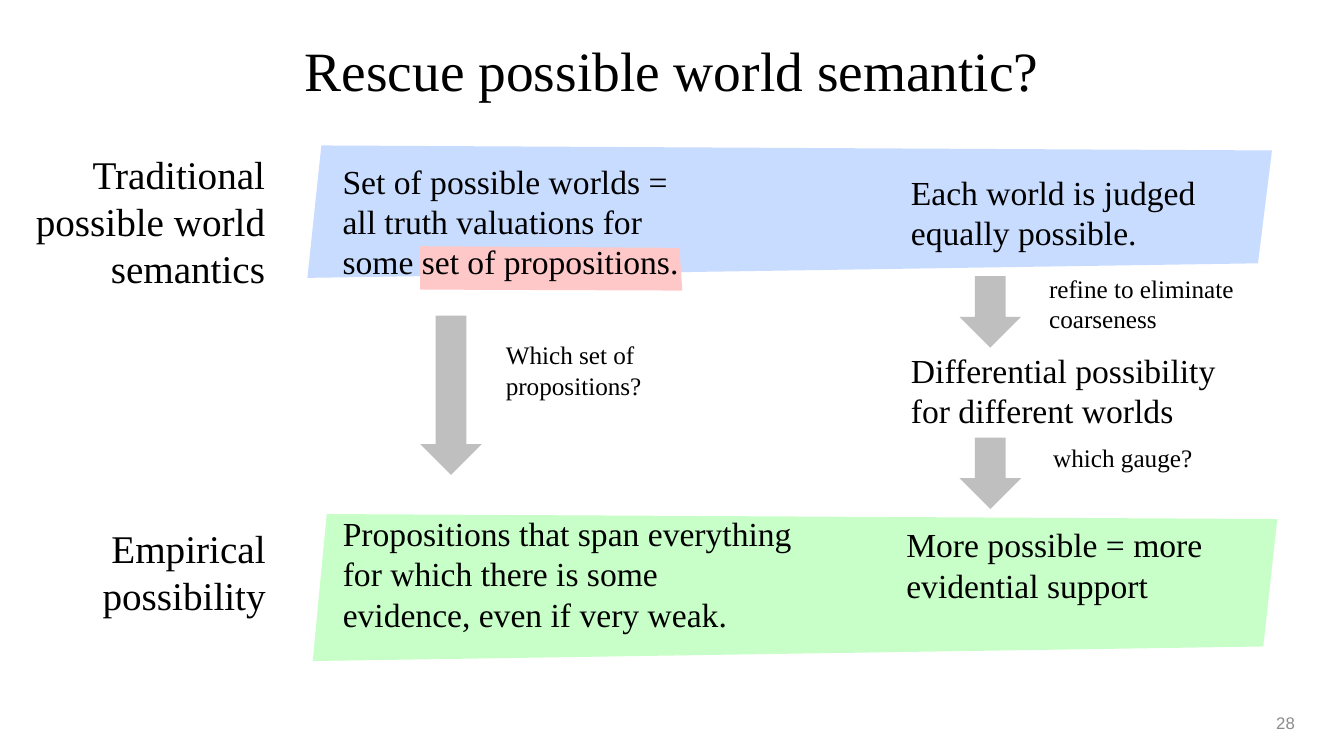
from pptx import Presentation
from pptx.dml.color import RGBColor
from pptx.enum.shapes import MSO_SHAPE
from pptx.enum.text import MSO_ANCHOR, PP_ALIGN
from pptx.util import Pt

SERIF = "Times New Roman"
BLACK, GREY, ARROW_GREY = "000000", "8C8C8C", "BFBFBF"
BLUE, GREEN, PINK = "C8DCFF", "C8FFC8", "FFC8C8"
LABEL_SIZE, BODY_SIZE, NOTE_SIZE = 28, 24, 18
ARROW_WIDTH = 44


def color(hex_string):
    return RGBColor.from_string(hex_string)


def paint(shape, fill):
    shape.shadow.inherit = False
    shape.fill.solid()
    shape.fill.fore_color.rgb = color(fill)
    shape.line.fill.background()


def add_text(slide, box, text, size, align=PP_ALIGN.LEFT, anchor=MSO_ANCHOR.TOP,
             font=SERIF, ink=BLACK, wrap=True):
    text_box = slide.shapes.add_textbox(*map(Pt, box))
    frame = text_box.text_frame
    frame.word_wrap = wrap
    frame.vertical_anchor = anchor
    frame.text = text
    paragraph = frame.paragraphs[0]
    paragraph.alignment = align
    run_font = paragraph.runs[0].font
    run_font.name, run_font.size = font, Pt(size)
    run_font.color.rgb = color(ink)
    return paragraph


def add_polygon(slide, points, fill):
    corners = [(Pt(x), Pt(y)) for x, y in points]
    builder = slide.shapes.build_freeform(*corners[0])
    builder.add_line_segments(corners[1:], close=True)
    paint(builder.convert_to_shape(), fill)


def add_band(slide, box, fill):
    """Slanted band whose right end is a little narrower than its left end."""
    left, top, width, height = box
    right, bottom, slant = left + width, top + height, 10
    add_polygon(slide, [(left + slant, top), (right, top + 3.6),
                        (right - slant, bottom - 10.4), (left, bottom)], fill)


def add_highlight(slide, box):
    left, top, width, height = box
    right, bottom = left + width, top + height
    add_polygon(slide, [(left, top), (right - 2, top + 1.2),
                        (right, bottom), (left, bottom - 0.7)], PINK)


def add_step(slide, box, question, note_left, note_top, wrap=True):
    """Down arrow at the left of the box, with a note offset inside the box."""
    left, top, width, height = box
    arrow = slide.shapes.add_shape(MSO_SHAPE.DOWN_ARROW, Pt(left), Pt(top),
                                   Pt(ARROW_WIDTH), Pt(height))
    paint(arrow, ARROW_GREY)
    add_text(slide, (left + note_left, top + note_top, width - note_left, 51),
             question, NOTE_SIZE, wrap=wrap)


def add_traditional_row(slide, box):
    left, top, width, height = box
    add_band(slide, box, BLUE)
    add_highlight(slide, (left + 80.6, top + 72, 187.2, 31.7))
    add_text(slide, (left - 231.1, top, 208, 109),
             "Traditional possible world semantics", LABEL_SIZE, PP_ALIGN.RIGHT)
    add_text(slide, (left + 18, top + 7.2, 259, 94),
             "Set of possible worlds = all truth valuations for "
             "some set of propositions.", BODY_SIZE)
    add_text(slide, (left + 424, top + 15.1, 268.5, 65.5),
             "Each world is judged equally possible.", BODY_SIZE)


def add_empirical_row(slide, box):
    left, top, width, height = box
    add_band(slide, box, GREEN)
    add_text(slide, (left - 245.5, top + 3.6, 219, 75),
             "Empirical possibility", LABEL_SIZE, PP_ALIGN.RIGHT)
    add_text(slide, (left + 14.4, top - 4.3, 335.5, 94),
             "Propositions that span everything for which there is some "
             "evidence, even if very weak.", BODY_SIZE)
    add_text(slide, (left + 416.9, top + 3.6, 295, 65.5),
             "More possible = more evidential support", BODY_SIZE)


def add_refinement(slide, box):
    """Two arrows with the intermediate stage between them."""
    left, top, width, height = box
    arrow_height = 51
    add_step(slide, (left, top, width, arrow_height),
             "refine to eliminate coarseness", 56.9, -5.8)
    add_text(slide, (left - 41.8, top + 49, 250.5, 65.5),
             "Differential possibility for different worlds", BODY_SIZE)
    add_step(slide, (left, top + height - arrow_height, width, arrow_height),
             "which gauge?", 59.8, 0, wrap=False)


def main():
    presentation = Presentation()
    presentation.slide_width, presentation.slide_height = Pt(960), Pt(540)
    slide = presentation.slides.add_slide(presentation.slide_layouts[6])

    title = add_text(slide, (66, 28.8, 828, 48), "Rescue possible world semantic?",
                     39.6, PP_ALIGN.CENTER, MSO_ANCHOR.MIDDLE)
    title.line_spacing = 0.9
    add_traditional_row(slide, (219.6, 103.9, 689, 94.6))
    add_empirical_row(slide, (223.4, 367.2, 689, 105))
    add_step(slide, (300.2, 225.4, 180, 113.8), "Which set of propositions?", 54, 13.7)
    add_refinement(slide, (685.4, 197.3, 224.7, 166.3))
    add_text(slide, (894, 501.8, 38, 28.8), "28", 12, PP_ALIGN.RIGHT,
             MSO_ANCHOR.MIDDLE, "Arial", GREY)
    presentation.save("out.pptx")


if __name__ == "__main__":
    main()
